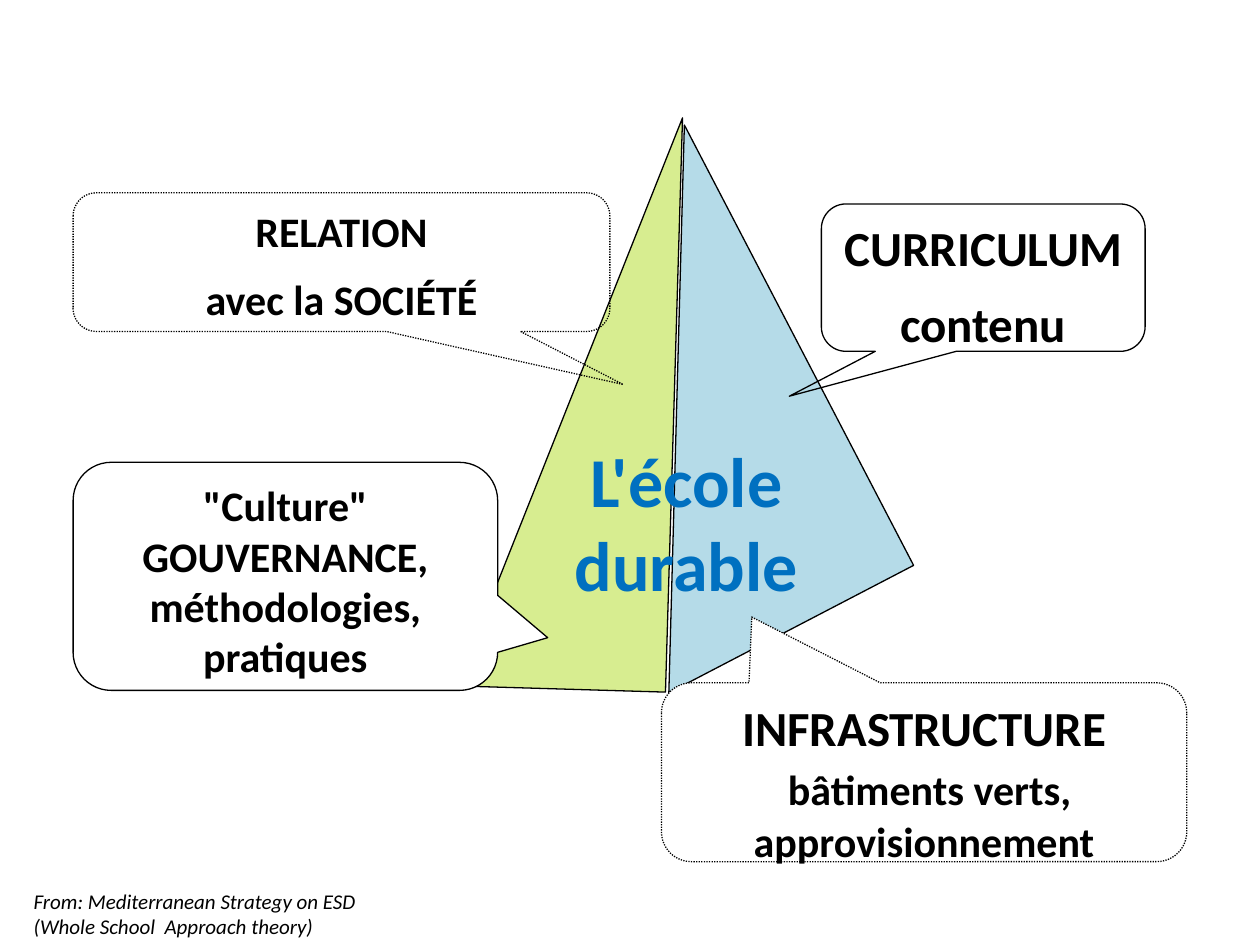
from dataclasses import dataclass
from typing import Optional

from lxml.etree import SubElement
from pptx import Presentation
from pptx.dml.color import RGBColor
from pptx.enum.dml import MSO_LINE_DASH_STYLE as Dash
from pptx.enum.shapes import MSO_SHAPE as Preset
from pptx.enum.text import MSO_ANCHOR as Anchor, MSO_AUTO_SIZE as AutoSize, PP_ALIGN as Align
from pptx.oxml.ns import qn
from pptx.util import Pt

BLACK = RGBColor(0x00, 0x00, 0x00)
WHITE = RGBColor(0xFF, 0xFF, 0xFF)
GREEN = RGBColor(0xC9, 0xE7, 0x67)
BLUE = RGBColor(0x0D, 0x8B, 0xB3)
TITLE_BLUE = RGBColor(0x00, 0x70, 0xC0)
FONT = "Calibri"


@dataclass(frozen=True)
class Box:
    left: float
    top: float
    width: float
    height: float

    def lengths(self) -> tuple:
        return Pt(self.left), Pt(self.top), Pt(self.width), Pt(self.height)


@dataclass(frozen=True)
class Face:
    box: Box
    rotation: float
    color: RGBColor
    opacity: int


@dataclass(frozen=True)
class Callout:
    box: Box
    tip: tuple[float, float]
    paragraphs: tuple[str, ...]
    size: int
    fill: Optional[RGBColor] = None
    dotted: bool = False
    detail: str = ""
    detail_size: int = 24


SOCIETY = Callout(Box(41.8, 110.2, 306.7, 79.2), (0.525, 0.883),
                  ("RELATION", "avec la SOCIÉTÉ"), 24, dotted=True)
GOVERNANCE = Callout(Box(41.8, 264.2, 242.6, 130.3), (0.618, 0.269),
                     ('"Culture" GOUVERNANCE, méthodologies, pratiques',), 24, WHITE)
CURRICULUM = Callout(Box(469.4, 116.6, 185, 84.2), (-0.599, 0.805),
                     ("CURRICULUM", "contenu"), 28)
INFRASTRUCTURE = Callout(Box(378, 390.2, 300.2, 102.2), (-0.328, -0.868),
                         ("INFRASTRUCTURE\v ",), 28, WHITE, True,
                         "bâtiments verts, approvisionnement")
LEFT_FACE = Face(Box(161.3, 169.9, 328.3, 119.5), 271.7, GREEN, 73)
RIGHT_FACE = Face(Box(244.8, 154.8, 283.7, 157.7), 242.5, BLUE, 30)


def style_font(font, size: float, color: RGBColor = BLACK, bold: bool = False,
               italic: bool = False) -> None:
    font.name, font.size = FONT, Pt(size)
    font.bold, font.italic = bold, italic
    font.color.rgb = color


def add_outlined(shapes, preset: Preset, box: Box):
    """Add an unfilled preset shape with a thin black outline."""
    shape = shapes.add_shape(preset, *box.lengths())
    shape.shadow.inherit = False
    shape.fill.background()
    shape.line.color.rgb = BLACK
    shape.line.width = Pt(0.75)
    return shape


def draw_face(shapes, face: Face) -> None:
    triangle = add_outlined(shapes, Preset.RIGHT_TRIANGLE, face.box)
    triangle.rotation = face.rotation
    triangle.fill.solid()
    triangle.fill.fore_color.rgb = face.color
    color = triangle.fill._xPr.find(qn("a:solidFill")).find(qn("a:srgbClr"))
    SubElement(color, qn("a:alpha")).set("val", str(face.opacity * 1000))


def draw_callout(shapes, callout: Callout) -> None:
    bubble = add_outlined(shapes, Preset.ROUNDED_RECTANGULAR_CALLOUT, callout.box)
    for index, value in enumerate((*callout.tip, 0.167)):
        bubble.adjustments[index] = value
    if callout.fill is not None:
        bubble.fill.solid()
        bubble.fill.fore_color.rgb = callout.fill
    if callout.dotted:
        bubble.line.dash_style = Dash.ROUND_DOT
    frame = bubble.text_frame
    frame.word_wrap = True
    frame.vertical_anchor = Anchor.TOP
    for index, text in enumerate(callout.paragraphs):
        paragraph = frame.add_paragraph() if index else frame.paragraphs[0]
        paragraph.text = text
        paragraph.alignment = Align.CENTER
        paragraph.space_before = paragraph.space_after = Pt(5)
        style_font(paragraph.font, callout.size, bold=True)
    if callout.detail:
        detail = paragraph.add_run()
        detail.text = callout.detail
        detail.font.size = Pt(callout.detail_size)


def add_label(shapes, box: Box, text: str):
    """Add a wrapping text box and return its frame and paragraph."""
    frame = shapes.add_textbox(*box.lengths()).text_frame
    frame.word_wrap = True
    paragraph = frame.paragraphs[0]
    paragraph.text = text
    return frame, paragraph


def main() -> None:
    deck = Presentation()
    deck.slide_width, deck.slide_height = Pt(720), Pt(540)
    shapes = deck.slides.add_slide(deck.slide_layouts[6]).shapes

    draw_face(shapes, LEFT_FACE)
    draw_callout(shapes, SOCIETY)
    draw_face(shapes, RIGHT_FACE)
    draw_callout(shapes, GOVERNANCE)
    draw_callout(shapes, CURRICULUM)

    _, school = add_label(shapes, Box(275.8, 246.2, 232.6, 39.6), "L'école durable")
    school.alignment = Align.CENTER
    school.space_after = Pt(10)
    style_font(school.font, 40, TITLE_BLUE, bold=True)

    draw_callout(shapes, INFRASTRUCTURE)

    credit_frame, credit = add_label(
        shapes, Box(12.2, 504, 203.8, 36),
        "From: Mediterranean Strategy on ESD \v(Whole School  Approach theory)")
    credit_frame.auto_size = AutoSize.SHAPE_TO_FIT_TEXT
    style_font(credit.font, 12, italic=True)

    deck.save("out.pptx")


if __name__ == "__main__":
    main()
